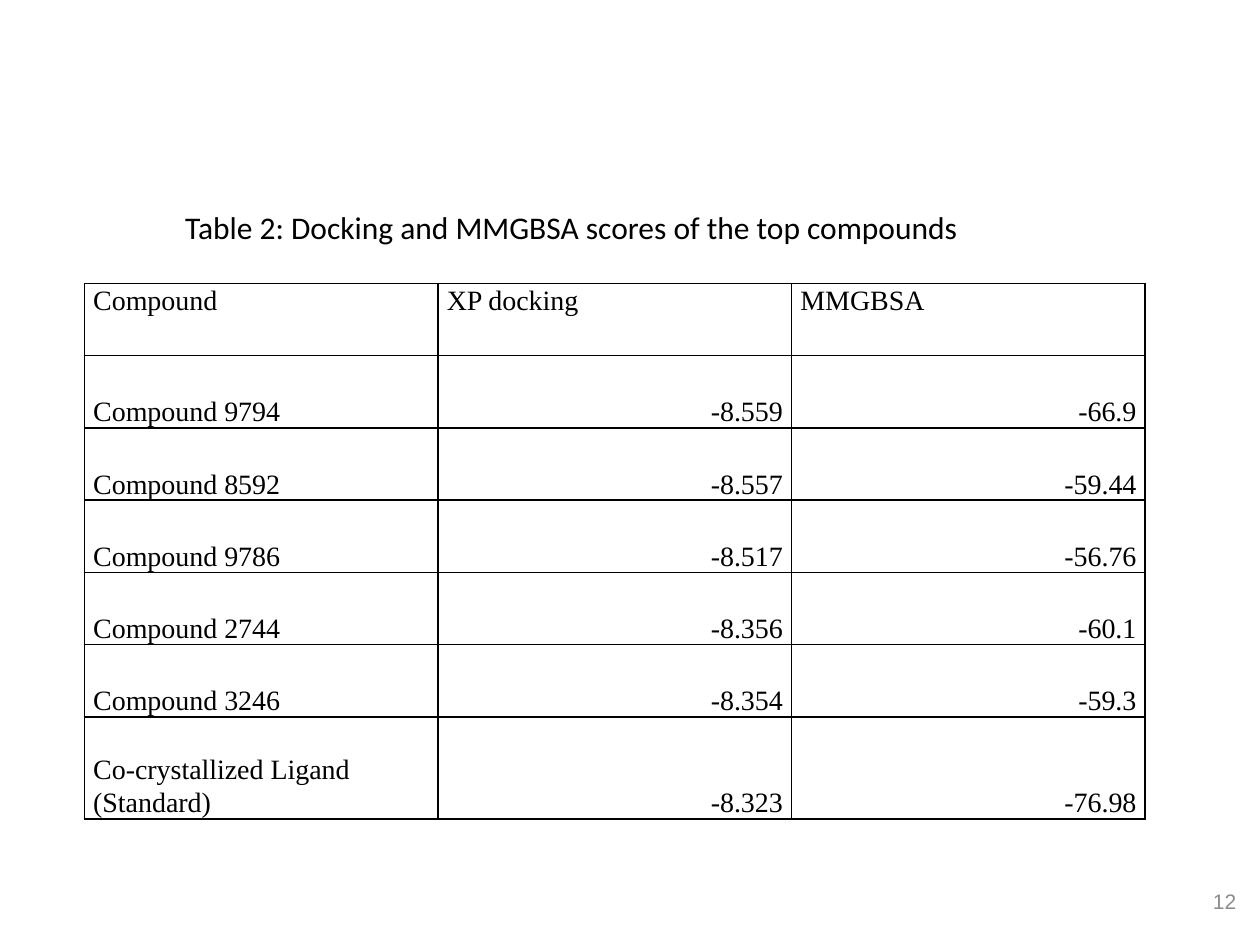
from dataclasses import dataclass

from lxml.etree import SubElement
from pptx import Presentation
from pptx.dml.color import RGBColor
from pptx.enum.text import MSO_ANCHOR, PP_ALIGN
from pptx.oxml.ns import qn
from pptx.util import Inches, Pt


@dataclass(frozen=True)
class Theme:
    ink: str = "000000"
    muted: str = "8C8C8C"
    head: tuple = ("Calibri", 18)
    body: tuple = ("Times New Roman", 16)
    foot: tuple = ("Arial", 12)
    rule: float = 1


THEME = Theme()
ROWS = [
    ("Compound", "XP docking", "MMGBSA"),
    ("Compound 9794", "-8.559", "-66.9"),
    ("Compound 8592", "-8.557", "-59.44"),
    ("Compound 9786", "-8.517", "-56.76"),
    ("Compound 2744", "-8.356", "-60.1"),
    ("Compound 3246", "-8.354", "-59.3"),
    ("Co-crystallized Ligand (Standard)", "-8.323", "-76.98"),
]


def apply(target, values):
    for name, value in values.items():
        setattr(target, name, value)


def write(frame, text, style, color, **form):
    """Put one formatted paragraph in a text frame."""
    para = frame.paragraphs[0]
    run = para.add_run()
    run.text = text
    face, size = style
    apply(para, form)
    apply(run.font, {"name": face, "size": Pt(size), "bold": False})
    run.font.color.rgb = RGBColor.from_string(color)


def place(shape, box):
    names = ("left", "top", "width", "height")
    apply(shape, dict(zip(names, map(Inches, box))))


def border(cell):
    """Rule all four sides; borders come before the fill in the XML."""
    props = cell._tc.get_or_add_tcPr()
    for side in ("lnL", "lnR", "lnT", "lnB"):
        line = SubElement(props, qn(f"a:{side}"), w=str(Pt(THEME.rule)))
        fill = SubElement(line, qn("a:solidFill"))
        SubElement(fill, qn("a:srgbClr"), val=THEME.ink)
    cell.fill.background()


def caption(slide, box):
    title = slide.shapes.title
    place(title, box)
    frame = title.text_frame
    apply(frame, {"word_wrap": True, "vertical_anchor": MSO_ANCHOR.TOP})
    write(frame, "Table 2: Docking and MMGBSA scores of the top compounds",
          THEME.head, THEME.ink, alignment=PP_ALIGN.LEFT)


def scores(slide, box, last):
    """Equal columns and rows, with a taller last row."""
    count, wide = len(ROWS), len(ROWS[0])
    table = slide.shapes.add_table(count, wide, *map(Inches, box)).table
    apply(table, {"first_row": False, "horz_banding": False})
    for col in table.columns:
        col.width = Inches(box[2] / wide)
    for row in table.rows:
        row.height = Inches((box[3] - last) / (count - 1))
    table.rows[count - 1].height = Inches(last)

    for r, row in enumerate(ROWS):
        for c, text in enumerate(row):
            cell = table.cell(r, c)
            apply(cell, {
                "margin_left": Inches(0.07), "margin_right": Inches(0.07),
                "margin_top": 0, "margin_bottom": 0,
                "vertical_anchor": MSO_ANCHOR.BOTTOM if r else MSO_ANCHOR.TOP,
            })
            side = PP_ALIGN.RIGHT if r and c else PP_ALIGN.LEFT
            write(cell.text_frame, text, THEME.body, THEME.ink,
                  alignment=side, line_spacing=1.07)
            border(cell)


def number(slide, box):
    frame = slide.shapes.add_textbox(*map(Inches, box)).text_frame
    apply(frame, {"word_wrap": True, "vertical_anchor": MSO_ANCHOR.MIDDLE})
    write(frame, "12", THEME.foot, THEME.muted, alignment=PP_ALIGN.RIGHT)


def main():
    deck = Presentation()
    apply(deck, {"slide_width": Inches(10), "slide_height": Inches(7.5)})
    slide = deck.slides.add_slide(deck.slide_layouts.get_by_name("Title Only"))

    # Caption, table and page number
    caption(slide, (1.37, 1.6, 6.72, 0.4))
    scores(slide, (0.67, 2.25, 8.42, 4.25), last=0.81)
    number(slide, (7.58, 6.95, 2.33, 0.4))
    deck.save("out.pptx")


if __name__ == "__main__":
    main()
